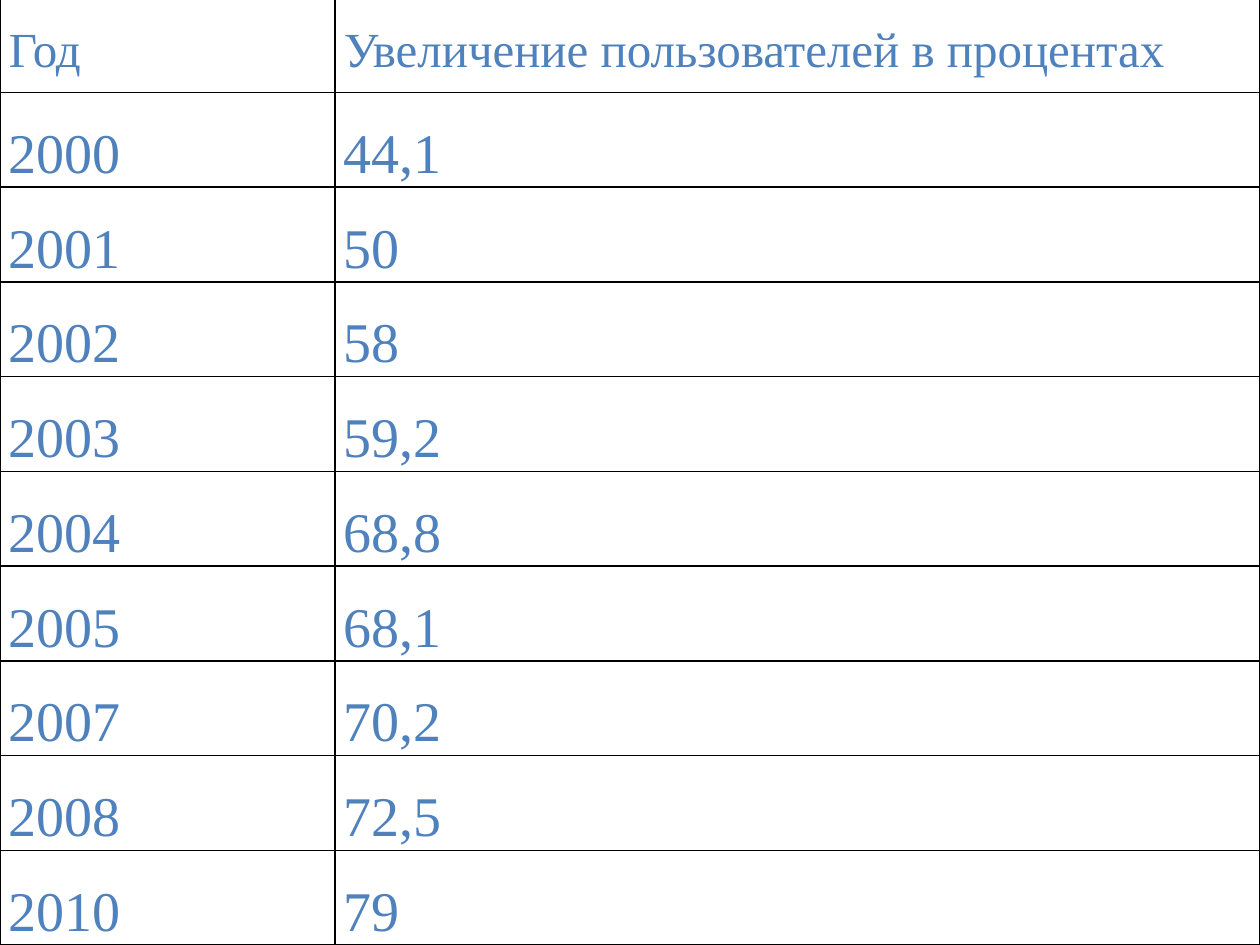
from lxml import etree
from pptx import Presentation
from pptx.dml.color import RGBColor
from pptx.enum.text import MSO_ANCHOR, PP_ALIGN
from pptx.oxml.ns import qn
from pptx.util import Cm, Pt

JUSTIFY = PP_ALIGN.JUSTIFY
TOP = MSO_ANCHOR.TOP

COLORS = {"text": "4F81BD", "border": "000000"}
FONT = "Times New Roman"

HEADER = ("Год", "Увеличение пользователей в процентах")
USER_GROWTH = [
    ("2000", "44,1"),
    ("2001", "50"),
    ("2002", "58"),
    ("2003", "59,2"),
    ("2004", "68,8"),
    ("2005", "68,1"),
    ("2007", "70,2"),
    ("2008", "72,5"),
    ("2010", "79"),
]


def write_text(text_frame, text, size, color, alignment=JUSTIFY, line_spacing=1.5):
    paragraph = text_frame.paragraphs[0]
    paragraph.alignment = alignment
    paragraph.line_spacing = line_spacing
    run = paragraph.add_run()
    run.text = text
    run.font.name = FONT
    run.font.size = Pt(size)
    run.font.color.rgb = RGBColor.from_string(color)


class SlideBuilder:
    def __init__(self, slide, colors):
        self.slide = slide
        self.colors = colors

    def border(self, cell, width=1):
        properties = cell._tc.get_or_add_tcPr()
        for side in ("L", "R", "T", "B"):
            line = etree.SubElement(properties, qn(f"a:ln{side}"), w=str(Pt(width)))
            fill = etree.SubElement(line, qn("a:solidFill"))
            etree.SubElement(fill, qn("a:srgbClr"), val=self.colors["border"])

    def cell(self, cell, text, size):
        cell.margin_left = cell.margin_right = Cm(0.18)
        cell.margin_top = cell.margin_bottom = 0
        cell.vertical_anchor = TOP
        self.border(cell)
        cell.fill.background()
        write_text(cell.text_frame, text, size, self.colors["text"])

    def table(self, rows, left, top, column_widths, header_height, row_height):
        heights = [header_height] + [row_height] * (len(rows) - 1)
        frame = self.slide.shapes.add_table(
            len(rows), len(column_widths),
            Cm(left), Cm(top), Cm(sum(column_widths)), Cm(sum(heights)),
        )
        table = frame.table
        table.first_row = False
        table.horz_banding = False
        for column, width in zip(table.columns, column_widths):
            column.width = Cm(width)
        for row_index, (row, height) in enumerate(zip(rows, heights)):
            table.rows[row_index].height = Cm(height)
            size = 28 if row_index == 0 else 32
            for column_index, text in enumerate(row):
                self.cell(table.cell(row_index, column_index), text, size)


def main():
    presentation = Presentation()
    presentation.slide_width = Cm(25.4)
    presentation.slide_height = Cm(19.05)
    slide = presentation.slides.add_slide(presentation.slide_layouts[6])
    builder = SlideBuilder(slide, COLORS)
    builder.table(
        [HEADER] + USER_GROWTH, left=0, top=-0.07,
        column_widths=(6.75, 18.65), header_height=1.93, row_height=1.91,
    )
    presentation.save("out.pptx")


if __name__ == "__main__":
    main()
